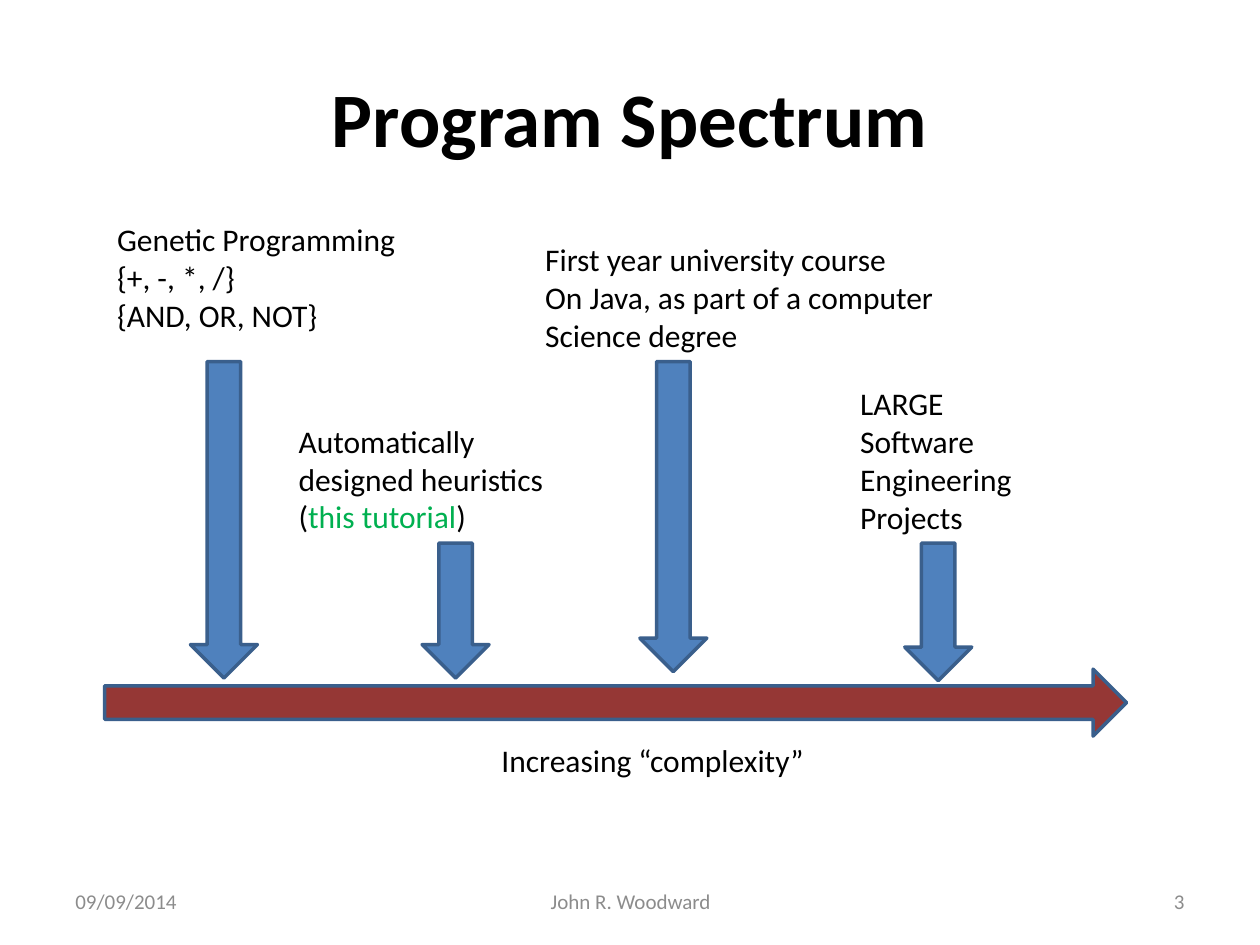
"""Build the Program Spectrum slide: kinds of programs along a complexity axis."""
import pptx
import pptx.dml.color
import pptx.enum.shapes
import pptx.enum.text
import pptx.util

Cm = pptx.util.Cm
ALIGN = pptx.enum.text.PP_ALIGN
MIDDLE = pptx.enum.text.MSO_ANCHOR.MIDDLE
SHAPE = pptx.enum.shapes.MSO_SHAPE
COLORS = {
    "text": "000000",
    "highlight": "00B050",
    "footer": "8C8C8C",
    "arrow": "4F81BD",
    "axis": "953735",
    "outline": "3A5F8C",
}


def format_text(frame, size, color, align=ALIGN.LEFT, bold=False):
    for para in frame.paragraphs:
        para.alignment = align
        for span in para.runs:
            span.font.name = "Calibri"
            span.font.size = pptx.util.Pt(size)
            span.font.bold = bold
            span.font.color.rgb = pptx.dml.color.RGBColor.from_string(COLORS[color])


def add_arrow(page, kind, left, top, width, height, color):
    arrow = page.shapes.add_shape(kind, Cm(left), Cm(top), Cm(width), Cm(height))
    arrow.shadow.inherit = False
    arrow.fill.solid()
    arrow.fill.fore_color.rgb = pptx.dml.color.RGBColor.from_string(COLORS[color])
    arrow.line.color.rgb = pptx.dml.color.RGBColor.from_string(COLORS["outline"])
    arrow.line.width = pptx.util.Pt(2)


deck = pptx.Presentation()
deck.slide_width, deck.slide_height = Cm(25.4), Cm(19.05)
page = deck.slides.add_slide(deck.slide_layouts[5])

title = page.shapes.title
title.left, title.top, title.width, title.height = Cm(1.27), Cm(0.76), Cm(22.86), Cm(3.18)
title.text_frame.text = "Program Spectrum"
title.text_frame.vertical_anchor = MIDDLE
format_text(title.text_frame, 44, "text", ALIGN.CENTER, True)

footers = [
    ("09/09/2014", 1.27, 5.92, ALIGN.LEFT),
    ("John R. Woodward", 8.69, 8.05, ALIGN.CENTER),
    ("3", 18.21, 5.92, ALIGN.RIGHT),
]
for text, left, width, align in footers:
    box = page.shapes.add_textbox(Cm(left), Cm(17.65), Cm(width), Cm(1.02))
    box.text_frame.word_wrap = True
    box.text_frame.vertical_anchor = MIDDLE
    box.text_frame.text = text
    format_text(box.text_frame, 12, "footer", align)

highlight = "this tutorial"
labels = [
    (f"Automatically\ndesigned heuristics\n({highlight})", 5.77, 8.38, 5.51, 2.57),
    ("First year university course\nOn Java, as part of a computer\nScience degree",
     10.74, 4.72, 8.43, 2.57),
    ("Increasing “complexity”", 9.86, 14.81, 6.68, 1.02),
    ("LARGE\nSoftware\nEngineering\nProjects", 17.09, 7.62, 3.76, 3.33),
    ("Genetic Programming\n{+, -, *, /}\n{AND, OR, NOT}", 2.11, 4.32, 6.2, 2.57),
]
for text, left, top, width, height in labels:
    box = page.shapes.add_textbox(Cm(left), Cm(top), Cm(width), Cm(height))
    frame = box.text_frame
    frame.word_wrap = False
    frame.auto_size = pptx.enum.text.MSO_AUTO_SIZE.SHAPE_TO_FIT_TEXT
    frame.text = text
    if highlight in text:
        para = frame.paragraphs[-1]
        pieces = para.text.partition(highlight)
        para.clear()
        for piece in pieces:
            para.add_run().text = piece
    format_text(frame, 18, "text")
    if highlight in text:
        para.runs[1].font.color.rgb = pptx.dml.color.RGBColor.from_string(COLORS["highlight"])

thickness = 1.35
pointers = [(3.84, 7.29, 6.38), (8.51, 10.95, 2.72), (12.9, 7.29, 6.25), (18.24, 10.95, 2.77)]
for left, top, height in pointers:
    add_arrow(page, SHAPE.DOWN_ARROW, left, top, thickness, height, "arrow")
add_arrow(page, SHAPE.RIGHT_ARROW, 2.11, 13.49, 20.6, thickness, "axis")

deck.save("out.pptx")
